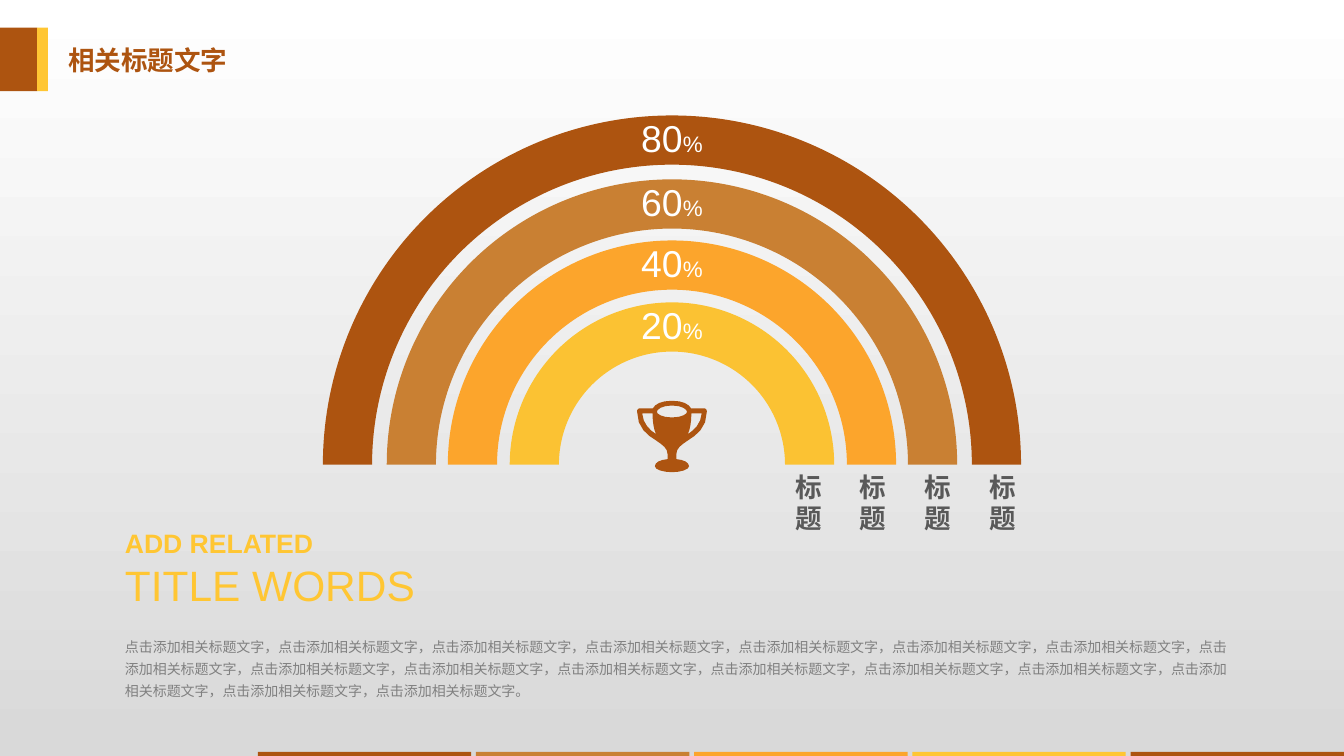
from pptx import Presentation
from pptx.dml.color import RGBColor
from pptx.enum.shapes import MSO_SHAPE as Shape
from pptx.enum.text import MSO_AUTO_SIZE as AutoSize, PP_ALIGN as Align
from pptx.util import Cm, Pt

BROWN, TAN, ORANGE, AMBER, YELLOW = "AD5410", "C98033", "FCA52C", "FBC233", "FFC633"
WHITE, DARK_GREY, GREY, PALE_GREY = "FFFFFF", "595959", "808080", "D9D9D9"

# All lengths are in centimetres.
SLIDE_WIDTH, SLIDE_HEIGHT = 33.88, 19.05
HEADING = "相关标题文字"
SUBTITLE = [[("ADD RELATED", 19, True)], [("TITLE WORDS", 30.3, False)]]
PHRASE, PHRASE_COUNT = "点击添加相关标题文字", 17
BODY = "，".join([PHRASE] * PHRASE_COUNT) + "。"

RINGS = [  # value, outer radius, colour
    ("80", 8.8, BROWN),
    ("60", 7.19, TAN),
    ("40", 5.65, ORANGE),
    ("20", 4.09, AMBER),
]
RING_CENTRE = (16.94, 11.71)
RING_THICKNESS = 1.24
RING_LABEL = "标题"
LABEL_LEFT, LABEL_STEP, LABEL_WIDTH = 19.8, 1.63, 1.07

HEADER_BLOCKS = [(0, 0.94, BROWN), (0.94, 0.27, YELLOW)]  # left, width, colour
FOOTER_COLOURS = [BROWN, TAN, ORANGE, YELLOW, BROWN]
FOOTER_LEFT, FOOTER_STEP, FOOTER_WIDTH = 6.5, 5.5, 5.38

# Right half of the trophy, from its axis and top: one point is a line, three a curve.
TROPHY_TOP = 10.1
TROPHY_BODY = [
    [(0, 1.8)],
    [(0.23, 1.8), (0.43, 1.73), (0.43, 1.65)],
    [(0.43, 1.55), (0.3, 1.49), (0.11, 1.47)],
    [(0.11, 1.35)],
    [(0.11, 1.19), (0.23, 1.12), (0.4, 1)],
    [(0.61, 0.87), (0.88, 0.69), (0.88, 0.27)],
    [(0.88, 0.22), (0.85, 0.19), (0.8, 0.19)],
    [(0.48, 0.19)],
    [(0.43, 0.09), (0.28, 0), (0, 0)],
]
TROPHY_RIM = [
    [(0, 0.12)],
    [(0.26, 0.12), (0.38, 0.22), (0.38, 0.28)],
    [(0.38, 0.33), (0.26, 0.42), (0, 0.42)],
]
TROPHY_HANDLE = [
    [(0.4, 0.84)],
    [(0.45, 0.74), (0.49, 0.56), (0.49, 0.32)],
    [(0.75, 0.32)],
    [(0.73, 0.58), (0.56, 0.74), (0.4, 0.84)],
]


def rgb(colour):
    return RGBColor.from_string(colour)


def paint(shape, colour):
    shape.shadow.inherit = False
    shape.fill.solid()
    shape.fill.fore_color.rgb = rgb(colour)
    shape.line.fill.background()


def add_preset(slide, preset, left, top, width, height, colour):
    shape = slide.shapes.add_shape(preset, Cm(left), Cm(top), Cm(width), Cm(height))
    paint(shape, colour)
    return shape


def add_text(slide, paragraphs, left, top, width, height, *, colour,
             align=Align.LEFT, wrap=True, spacing=None):
    """Add a text box; each paragraph is a list of (text, size, bold) runs."""
    frame = slide.shapes.add_textbox(Cm(left), Cm(top), Cm(width), Cm(height)).text_frame
    frame.word_wrap = wrap
    frame.auto_size = AutoSize.SHAPE_TO_FIT_TEXT
    for index, runs in enumerate(paragraphs):
        paragraph = frame.add_paragraph() if index else frame.paragraphs[0]
        paragraph.alignment = align
        paragraph.line_spacing = spacing
        for text, size, bold in runs:
            run = paragraph.add_run()
            run.text = text
            run.font.name = "Arial"
            run.font.size = Pt(size)
            run.font.bold = bold
            run.font.color.rgb = rgb(colour)


def curve_points(segments, steps=4):
    """Turn lines and cubic curves into a list of points."""
    points = list(segments[0])
    for segment in segments[1:]:
        if len(segment) == 1:
            points += segment
            continue
        controls = [points[-1], *segment]
        for step in range(1, steps + 1):
            t = step / steps
            weights = ((1 - t) ** 3, 3 * t * (1 - t) ** 2, 3 * t * t * (1 - t), t ** 3)
            points.append(tuple(
                sum(weight * control[axis] for weight, control in zip(weights, controls))
                for axis in (0, 1)
            ))
    return points


def mirror(points):
    return [(-x, y) for x, y in reversed(points)]


def add_trophy(slide):
    """Draw the cup as one outline; the rim and the handles are holes in it."""
    body, rim, handle = map(curve_points, (TROPHY_BODY, TROPHY_RIM, TROPHY_HANDLE))
    contours = [
        [(Cm(RING_CENTRE[0] + x), Cm(TROPHY_TOP + y)) for x, y in contour]
        for contour in (body + mirror(body)[1:-1], rim + mirror(rim)[1:-1],
                        handle[:-1], mirror(handle)[:-1])
    ]
    builder = slide.shapes.build_freeform(*contours[0][0], scale=1.0)
    for index, (start, *rest) in enumerate(contours):
        if index:
            builder.move_to(*start)
        builder.add_line_segments(rest, close=True)
    paint(builder.convert_to_shape(), BROWN)


def set_background(slide):
    fill = slide.background.fill
    fill.gradient()
    fill.gradient_angle = 270
    for stop, position, colour in zip(fill.gradient_stops, (0, 0.99), (WHITE, PALE_GREY)):
        stop.position = position
        stop.color.rgb = rgb(colour)


def main():
    presentation = Presentation()
    presentation.slide_width, presentation.slide_height = Cm(SLIDE_WIDTH), Cm(SLIDE_HEIGHT)
    slide = presentation.slides.add_slide(presentation.slide_layouts[6])
    set_background(slide)

    for left, width, colour in HEADER_BLOCKS:
        add_preset(slide, Shape.RECTANGLE, left, 0.7, width, 1.6, colour)
    add_text(slide, [[(HEADING, 19, True)]], 1.47, 0.97, 5, 1.07, colour=BROWN)

    centre_x, centre_y = RING_CENTRE
    for index, (value, radius, colour) in enumerate(RINGS):
        diameter = 2 * radius
        ring = add_preset(slide, Shape.BLOCK_ARC, centre_x - radius, centre_y - radius,
                          diameter, diameter, colour)
        ring.adjustments[2] = RING_THICKNESS / diameter
        add_text(slide, [[(value, 26.7, False), ("%", 16, False)]],
                 centre_x - 1.04, centre_y - radius - 0.13, 2.08, 1.4,
                 colour=WHITE, align=Align.CENTER, wrap=False)
        add_text(slide, [[(RING_LABEL, 19, True)]], LABEL_LEFT + index * LABEL_STEP, 11.73,
                 LABEL_WIDTH, 1.88, colour=DARK_GREY, align=Align.CENTER)
    add_trophy(slide)

    add_text(slide, SUBTITLE, 2.9, 13.16, 10.16, 2.36, colour=YELLOW)
    add_text(slide, [[(BODY, 10, False)]], 2.9, 15.85, 28.27, 1.9, colour=GREY, spacing=1.3)

    for index, colour in enumerate(FOOTER_COLOURS):
        add_preset(slide, Shape.RECTANGLE, FOOTER_LEFT + index * FOOTER_STEP, 18.95,
                   FOOTER_WIDTH, 0.1, colour)

    presentation.save("out.pptx")


if __name__ == "__main__":
    main()
